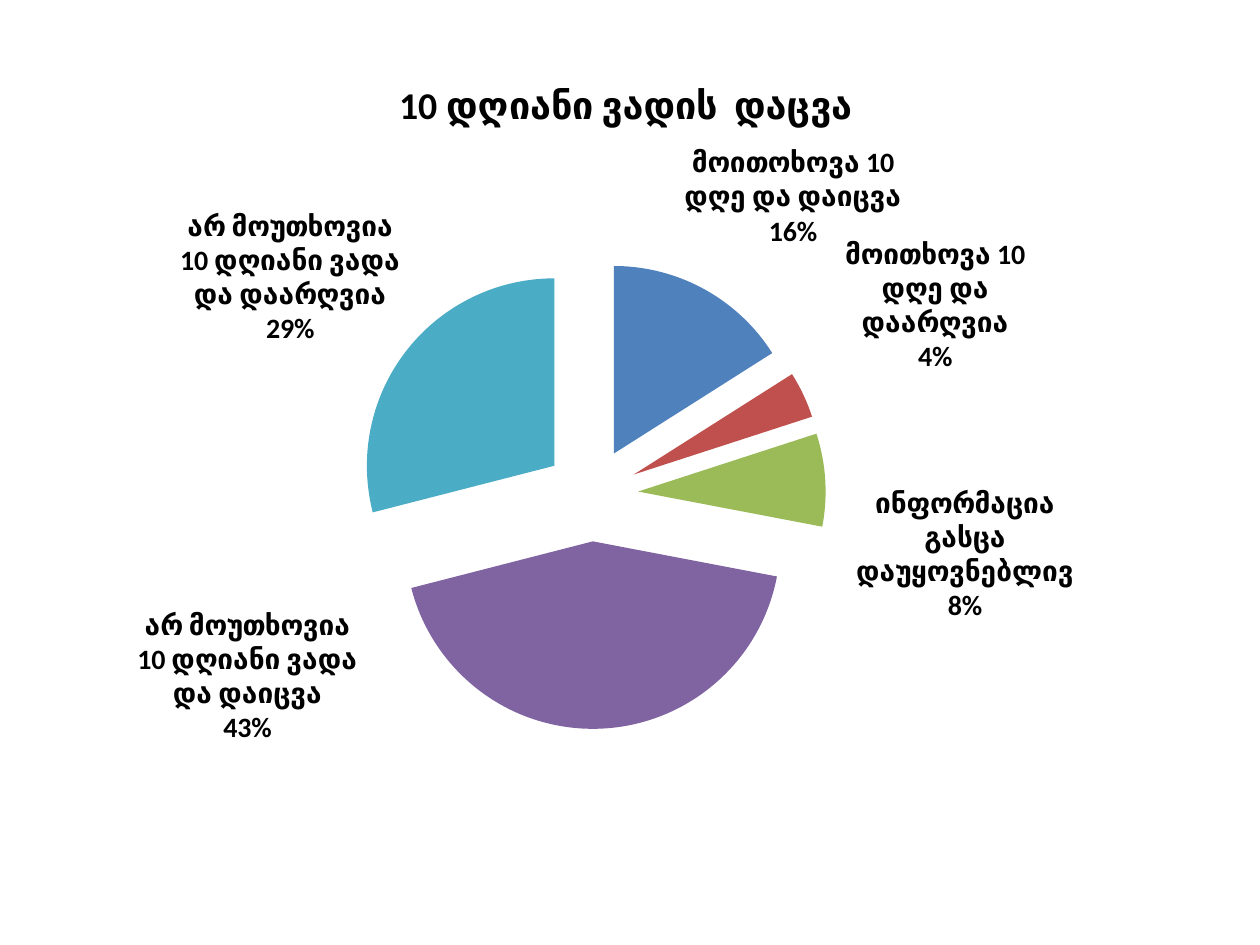
import pptx
import pptx.chart.data
import pptx.dml.color
import pptx.enum.chart
import pptx.oxml
import pptx.oxml.ns
import pptx.util
from pptx.util import Inches

# Content: category, percent, slice colour, label shift (fractions of the chart)
TITLE = "10 დღიანი ვადის  დაცვა"
SLICES = [
    ("მოითოხოვა 10 დღე და დაიცვა", 16, "4F81BD", (-0.02, -0.04)),
    ("მოითხოვა 10 დღე და დაარღვია", 4, "C0504D", (0.03, -0.02)),
    ("ინფორმაცია გასცა დაუყოვნებლივ", 8, "9BBB59", (0.02, 0.09)),
    ("არ მოუთხოვია 10 დღიანი ვადა და დაიცვა", 43, "8064A2", (-0.3, -0.15)),
    ("არ მოუთხოვია 10 დღიანი ვადა და დაარღვია", 29, "4BACC6", (0, 0)),
]
THEME = {"font": "Calibri", "text": "000000", "base": 18, "title": 21.6, "label": 16}
EXPLOSION = 25
OUTSIDE = pptx.enum.chart.XL_LABEL_POSITION.OUTSIDE_END


def chart_element(tag, **children):
    """Make a chart element whose children carry only a val attribute."""
    element = pptx.oxml.parse_xml(f"<c:{tag} {pptx.oxml.ns.nsdecls('c')}/>")
    for name, value in children.items():
        element.append(chart_element(name))
        element[-1].set("val", str(value))
    return element


def manual_layout(**values):
    layout = chart_element("layout")
    layout.append(chart_element("manualLayout", **values))
    return layout


def style_font(font, size, bold):
    font.name = THEME["font"]
    font.size = pptx.util.Pt(size)
    font.bold = bold
    font.color.rgb = pptx.dml.color.RGBColor.from_string(THEME["text"])


def show_category_and_percent(labels):
    """Set the content flags and put the percentage on its own line."""
    flags = {"showVal": 0, "showCatName": 1, "showPercent": 1}
    for name, value in flags.items():
        labels.find(pptx.oxml.ns.qn(f"c:{name}")).set("val", str(value))
    separator = chart_element("separator")
    separator.text = "\n"
    labels.find(pptx.oxml.ns.qn("c:showPercent")).getnext().addnext(separator)


# Slide
presentation = pptx.Presentation()
presentation.slide_width, presentation.slide_height = Inches(10), Inches(7.5)
slide = presentation.slides.add_slide(presentation.slide_layouts[6])

# Pie chart
chart_data = pptx.chart.data.CategoryChartData()
chart_data.categories = [category for category, *_ in SLICES]
chart_data.add_series("Series 1", [percent for _, percent, *_ in SLICES])
chart = slide.shapes.add_chart(
    pptx.enum.chart.XL_CHART_TYPE.PIE,
    Inches(0.23), Inches(0.23), Inches(9.3), Inches(6.72), chart_data).chart
style_font(chart.font, THEME["base"], False)
chart.has_legend = False
plot = chart.plots[0]
plot.vary_by_categories = True
series = plot.series[0]

# Chart title
chart.has_title = True
title = chart.chart_title
title.text_frame.text = TITLE
style_font(title.text_frame.paragraphs[0].font, THEME["title"], True)
title.include_in_layout = False

# Labels shared by the series
series_labels = series.data_labels
style_font(series_labels.font, THEME["label"], True)
series_labels.position = OUTSIDE

# Slices and their shifted labels
for index, (_, _, color, (shift_x, shift_y)) in enumerate(SLICES):
    point = series.points[index]
    point.format.fill.solid()
    point.format.fill.fore_color.rgb = pptx.dml.color.RGBColor.from_string(color)
    style_font(point.data_label.font, THEME["label"], True)
    point.data_label.position = OUTSIDE

# Explosion, label content and manual positions
chart_space = chart.element
for labels in chart_space.xpath(".//c:ser/c:dLbls | .//c:ser/c:dLbls/c:dLbl"):
    show_category_and_percent(labels)
for label, (*_, (shift_x, shift_y)) in zip(chart_space.xpath(".//c:dLbl"), SLICES):
    if shift_x or shift_y:
        label.insert(1, manual_layout(x=shift_x, y=shift_y))
for leader_lines in chart_space.xpath(".//c:ser/c:dLbls/c:showLeaderLines"):
    leader_lines.set("val", "0")
explosion = chart_element("explosion")
explosion.set("val", str(EXPLOSION))
chart_space.xpath(".//c:ser/c:dPt")[0].addprevious(explosion)

for parent, values in [
    ("c:title", dict(xMode="edge", yMode="edge", x=0.31, y=0.05)),
    ("c:plotArea", dict(layoutTarget="inner", xMode="edge", yMode="edge",
                        x=0.28, y=0.25, w=0.4, h=0.6)),
]:
    owner = chart_space.xpath(f"c:chart/{parent}")[0]
    for old_layout in owner.xpath("c:layout"):
        owner.remove(old_layout)
    layout = manual_layout(**values)
    if parent == "c:title":
        owner.xpath("c:tx")[0].addnext(layout)
    else:
        owner.insert(0, layout)

presentation.save("out.pptx")
